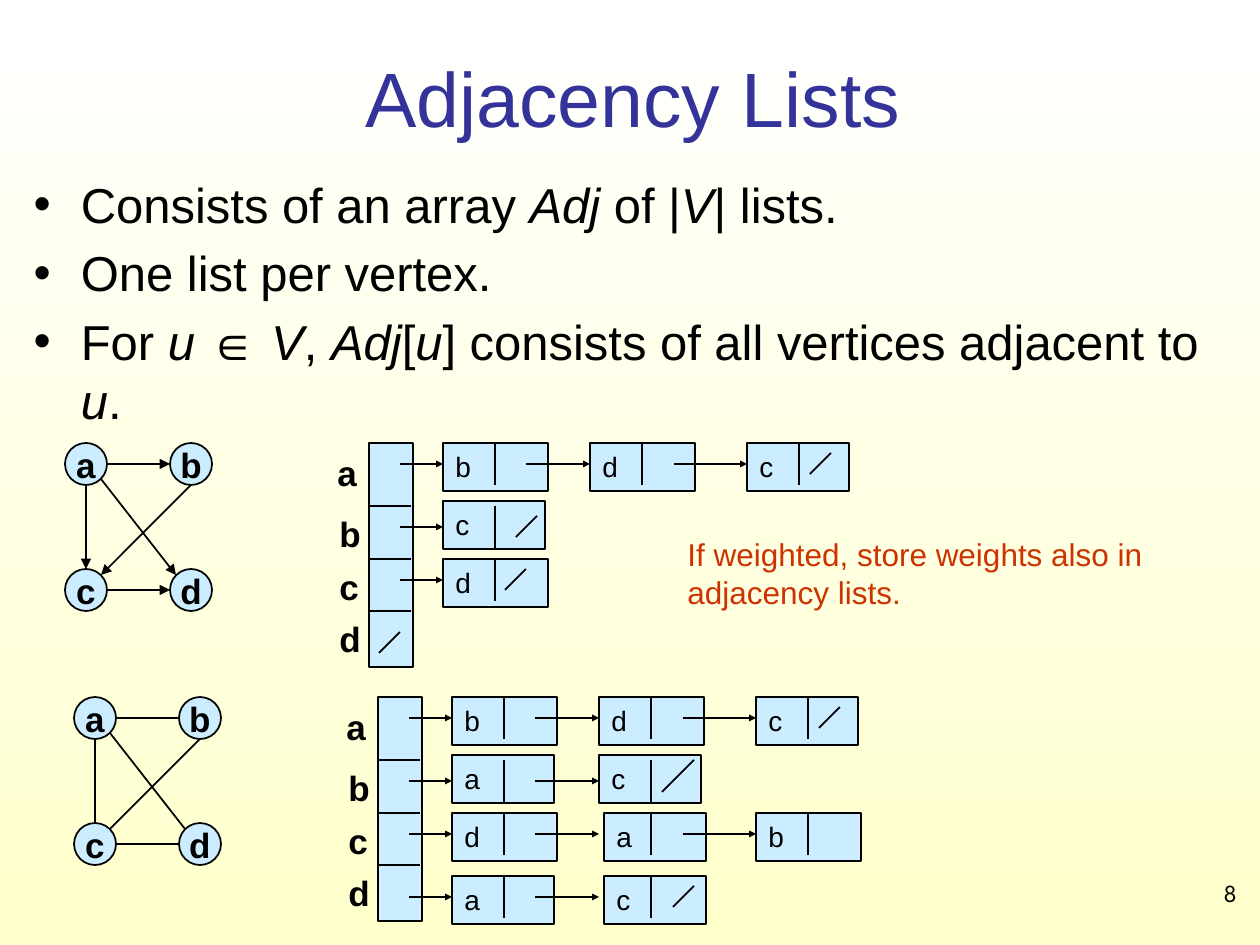
from lxml.etree import SubElement
from pptx import Presentation
from pptx.dml.color import RGBColor
from pptx.enum.shapes import MSO_CONNECTOR, MSO_SHAPE
from pptx.enum.text import MSO_ANCHOR, PP_ALIGN
from pptx.oxml.ns import qn
from pptx.util import Emu, Pt

BLACK = RGBColor(0x00, 0x00, 0x00)
WHITE = RGBColor(0xFF, 0xFF, 0xFF)
CREAM = RGBColor(0xFF, 0xFF, 0xCC)
SKY = RGBColor(0xCC, 0xEC, 0xFF)
INDIGO = RGBColor(0x33, 0x33, 0x99)
RUST = RGBColor(0xCC, 0x33, 0x00)

PX_PER_INCH = 126
VERTICES = "abcd"
SLOT_TOPS = (0, 63, 116, 179)
SLOT_DIVIDERS = (63, 116, 168)
LABEL_TOPS = (2, *SLOT_DIVIDERS)
NODE_TOPS = (0, 58, 116, 179)
NODE_LEFTS = (378, 525, 682)
NODE_WIDTHS = {"a": 102, "b": 105, "c": 102, "d": 105}
POINTER_STARTS = (335, 461, 609)
EDGES = (
    ((42, 21), (105, 21)),
    ((126, 42), (36, 132)),
    ((21, 42), (21, 126)),
    ((36, 36), (111, 132)),
    ((42, 147), (105, 147)),
)
DIRECTED_LISTS = ("bdc", "c", "d", "")
DIRECTED_NULLS = ((766, 10, 21), (472, 73, 21), (461, 126, 21), (335, 189, 21))
UNDIRECTED_LISTS = ("bdc", "ac", "dab", "ac")
UNDIRECTED_NULLS = ((766, 10, 21), (620, 63, 32), (620, 189, 21))
BULLETS = (
    (("Consists of an array ", False), ("Adj", True), (" of |", False),
     ("V", True), ("| lists.", False)),
    (("One list per vertex.", False),),
    (("For ", False), ("u ", True), ("∈ ", False), ("V", True), (", ", False),
     ("Adj", True), ("[", False), ("u", True),
     ("] consists of all vertices adjacent to ", False), ("u", True), (".", False)),
)


def px(length):
    """Turn pixels into EMU."""
    return Emu(round(length * 914400 / PX_PER_INCH))


def move(placeholder, left, top, width, height):
    """Set the box of a placeholder."""
    placeholder.left, placeholder.top = px(left), px(top)
    placeholder.width, placeholder.height = px(width), px(height)


def style(paragraph, size, color=BLACK, bold=False, face="Arial"):
    """Format the font of a whole paragraph."""
    font = paragraph.font
    font.name, font.size, font.bold = face, Pt(size), bold
    font.color.rgb = color


def add_text(shapes, text, box, size, **look):
    """Add a wrapping text box and return its paragraph."""
    frame = shapes.add_textbox(*map(px, box)).text_frame
    frame.word_wrap = True
    frame.margin_right = px(0)
    paragraph = frame.paragraphs[0]
    paragraph.text = text
    style(paragraph, size, **look)
    return paragraph


def add_box(shapes, preset, box):
    """Add a pale blue shape with a thin black outline."""
    shape = shapes.add_shape(preset, *map(px, box))
    shape.shadow.inherit = False
    shape.fill.solid()
    shape.fill.fore_color.rgb = SKY
    shape.line.color.rgb = BLACK
    shape.line.width = Pt(1)
    return shape


def add_line(shapes, start, end, arrow=None):
    """Draw a line, with an arrowhead of the given size if any."""
    line = shapes.add_connector(MSO_CONNECTOR.STRAIGHT, *map(px, (*start, *end)))
    line.line.color.rgb = BLACK
    line.line.width = Pt(1)
    properties = line.element.spPr
    if arrow:
        SubElement(properties.find(qn("a:ln")), qn("a:tailEnd"),
                   type="triangle", w=arrow, len=arrow)
    SubElement(properties, qn("a:effectLst"))


def add_graph(shapes, left, top, directed):
    """Draw the four vertices in a square and the edges between them."""
    for index, vertex in enumerate(VERTICES):
        row, column = divmod(index, 2)
        circle = add_box(shapes, MSO_SHAPE.OVAL,
                         (left + 105 * column, top + 126 * row, 42, 42))
        frame = circle.text_frame
        frame.word_wrap = False
        frame.text = vertex
        frame.paragraphs[0].alignment = PP_ALIGN.CENTER
        style(frame.paragraphs[0], 20, bold=True)
    for (x1, y1), (x2, y2) in EDGES:
        add_line(shapes, (left + x1, top + y1), (left + x2, top + y2),
                 "med" if directed else None)


def add_node(shapes, left, top, vertex):
    """Draw the box of one list node with its vertex."""
    frame = add_box(shapes, MSO_SHAPE.RECTANGLE,
                    (left, top, NODE_WIDTHS[vertex], 48)).text_frame
    frame.vertical_anchor = MSO_ANCHOR.TOP
    frame.text = vertex
    frame.paragraphs[0].alignment = PP_ALIGN.LEFT
    style(frame.paragraphs[0], 16)


def add_lists(shapes, left, top, lists, nulls):
    """Draw the vertex array, its linked lists and the null marks."""
    add_box(shapes, MSO_SHAPE.RECTANGLE, (left + 304, top, 44, 224))
    for y in SLOT_DIVIDERS:
        add_line(shapes, (left + 304, top + y), (left + 346, top + y))
    for row, (vertex, neighbours) in enumerate(zip(VERTICES, lists)):
        add_text(shapes, vertex,
                 (left + (262 if row else 260), top + LABEL_TOPS[row], 45, 54),
                 20, bold=True)
        slot = top + SLOT_TOPS[row]
        for column, neighbour in enumerate(neighbours):
            x = left + NODE_LEFTS[column]
            shift = 5 if column == 1 and row >= 2 else 0
            add_node(shapes, x + shift, top + NODE_TOPS[row], neighbour)
            add_line(shapes, (x + 52, slot), (x + 52, slot + 42))
        for column in range(len(neighbours)):
            add_line(shapes, (left + POINTER_STARTS[column], slot + 21),
                     (left + NODE_LEFTS[column], slot + 21), "sm")
    for x, y, size in nulls:
        add_line(shapes, (left + x, top + y), (left + x - size, top + y + size))


def add_heading(slide):
    """Fill the title and the bullet list."""
    title = slide.shapes.title
    move(title, 66, 0, 1134, 193)
    title.text = "Adjacency Lists"
    style(title.text_frame.paragraphs[0], 44, INDIGO)
    body = slide.placeholders[1]
    move(body, 21, 168, 1218, 220)
    frame = body.text_frame
    for index, pieces in enumerate(BULLETS):
        paragraph = frame.add_paragraph() if index else frame.paragraphs[0]
        style(paragraph, 28)
        for text, italic in pieces:
            run = paragraph.add_run()
            run.text = text
            run.font.italic = italic


def paint_background(slide):
    """Fill the slide from white down to cream."""
    fill = slide.background.fill
    fill.gradient()
    fill.gradient_angle = 270
    for stop, color in zip(fill.gradient_stops, (WHITE, CREAM)):
        stop.color.rgb = color


def main():
    """Build the slide and save it."""
    deck = Presentation()
    deck.slide_width, deck.slide_height = px(1260), px(945)
    slide = deck.slides.add_slide(deck.slide_layouts[1])
    paint_background(slide)
    add_heading(slide)
    add_graph(slide.shapes, 65, 443, directed=True)
    add_lists(slide.shapes, 65, 443, DIRECTED_LISTS, DIRECTED_NULLS)
    undirected = slide.shapes.add_group_shape().shapes
    add_graph(undirected, 74, 697, directed=False)
    add_lists(undirected, 74, 697, UNDIRECTED_LISTS, UNDIRECTED_NULLS)
    add_text(slide.shapes, "If weighted, store weights also in adjacency lists.",
             (675, 529, 585, 113), 18, color=RUST)
    number = add_text(slide.shapes, "8", (1165, 872, 72, 66), 14, face="League Spartan")
    number.alignment = PP_ALIGN.RIGHT
    deck.save("out.pptx")


if __name__ == "__main__":
    main()
